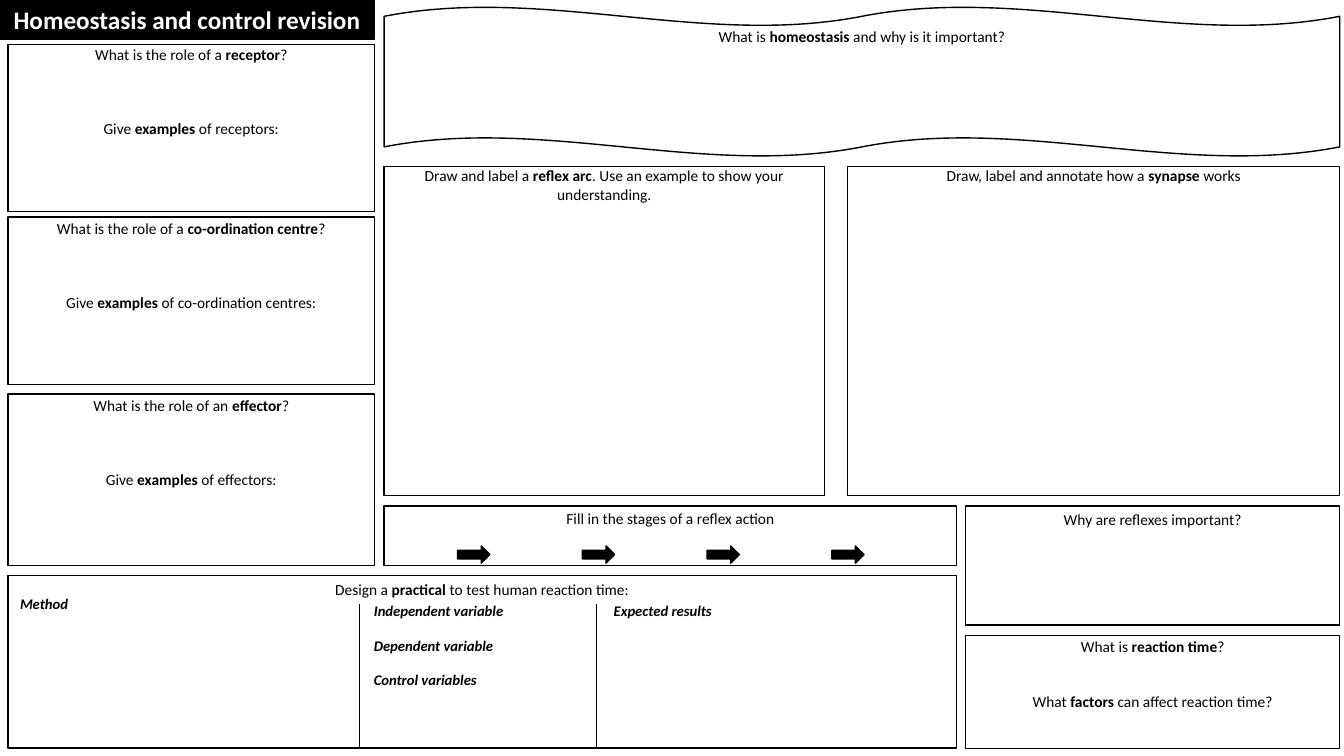
from dataclasses import dataclass

from lxml.etree import SubElement
from pptx import Presentation
from pptx.dml.color import RGBColor
from pptx.enum.shapes import MSO_CONNECTOR, MSO_SHAPE
from pptx.enum.text import MSO_ANCHOR, MSO_AUTO_SIZE, PP_ALIGN
from pptx.oxml.ns import qn
from pptx.util import Pt


@dataclass(frozen=True)
class Theme:
    ink: RGBColor = RGBColor(0, 0, 0)
    paper: RGBColor = RGBColor(255, 255, 255)
    font: str = "Calibri"
    title: float = 18
    prompt: float = 11
    label: float = 10.5
    border: float = 1
    divider: float = 0.5


@dataclass(frozen=True)
class Panel:
    """A worksheet box; ** in a line switches bold, gap separates its lines."""
    left: float
    top: float
    width: float
    height: float
    lines: tuple[str, ...] = ()
    inset: float = 0
    gap: float = 0
    kind: MSO_SHAPE = MSO_SHAPE.RECTANGLE


@dataclass(frozen=True)
class Label:
    left: float
    top: float
    width: float
    height: float
    lines: tuple[str, ...]


THEME = Theme()
PROCESS = MSO_SHAPE.FLOWCHART_PROCESS
LEFT, MIDDLE, RIGHT = 5.6, 274.4, 689.8
SIDE_W, RIGHT_W = 262, 267.2
ROLE_GAP = 39.6

PANELS = (
    Panel(MIDDLE, 5, 682.6, 106.6,
          ("What is **homeostasis** and why is it important?",),
          inset=0.7, kind=MSO_SHAPE.DOUBLE_WAVE),
    Panel(LEFT, 31.6, SIDE_W, 119.6,
          ("What is the role of a **receptor**?", "Give **examples** of receptors:"),
          inset=0.9, gap=ROLE_GAP),
    Panel(LEFT, 154.9, SIDE_W, 119.6,
          ("What is the role of a **co-ordination centre**?",
           "Give **examples** of co-ordination centres:"),
          inset=1.4, gap=ROLE_GAP),
    Panel(LEFT, 281.4, SIDE_W, 122.4,
          ("What is the role of an **effector**?", "Give **examples** of effectors:"),
          inset=1.8, gap=ROLE_GAP),
    Panel(MIDDLE, 118.8, 314.6, 235.4,
          ("Draw and label a **reflex arc**. Use an example to show your understanding.",)),
    Panel(MIDDLE, 361.4, 409, 42.5, ("Fill in the stages of a reflex action",),
          inset=1.9, kind=PROCESS),
    Panel(605.5, 118.8, 351.4, 235.4,
          ("Draw, label and annotate how a **synapse** works",)),
    Panel(RIGHT, 361.4, RIGHT_W, 85, ("Why are reflexes important?",),
          inset=3.3, kind=PROCESS),
    Panel(RIGHT, 454, RIGHT_W, 80.8,
          ("What is **reaction time**?", "What **factors** can affect reaction time?"),
          inset=1.1, gap=26, kind=PROCESS),
    Panel(LEFT, 411.2, 677.6, 123.2,
          ("Design a **practical** to test human reaction time:",), inset=2.9),
)
ARROW = Panel(326.9, 390, 23, 12.3, kind=MSO_SHAPE.RIGHT_ARROW)
ARROW_COUNT, ARROW_STEP = 4, 89.1

LABELS = (
    Label(7.2, 421.2, 82, 20.6, ("Method",)),
    Label(260, 426.3, 161.3, 70.6,
          ("Independent variable", "Dependent variable", "Control variables")),
    Label(431.3, 426.3, 202.3, 20.2, ("Expected results",)),
)
LABEL_GAP = 12.2
DIVIDERS, DIVIDER_TOP, DIVIDER_BOTTOM = (256.6, 426.2), 431.3, 534.6


def write(tf, lines: tuple[str, ...], *, size: float, color: RGBColor = THEME.ink,
          bold: bool = False, italic: bool = False,
          align: PP_ALIGN = PP_ALIGN.CENTER, gap: float = 0) -> None:
    tf.word_wrap = True
    for i, line in enumerate(lines):
        p = tf.add_paragraph() if i else tf.paragraphs[0]
        p.alignment = align
        p.space_before = Pt(gap if i else 0)
        for j, part in enumerate(line.split("**")):
            r = p.add_run()
            r.text = part
            f = r.font
            f.name, f.size, f.italic = THEME.font, Pt(size), italic
            f.bold = bold or j % 2 == 1
            f.color.rgb = color


def paint(sp, fill: RGBColor) -> None:
    sp.fill.solid()
    sp.fill.fore_color.rgb = fill
    sp.line.color.rgb = THEME.ink
    sp.line.width = Pt(THEME.border)


def add_title(s, text: str) -> None:
    sp = s.shapes.title
    sp.left, sp.top, sp.width, sp.height = Pt(0), Pt(0), Pt(267.2), Pt(28.1)
    paint(sp, THEME.ink)
    tf = sp.text_frame
    tf.auto_size = MSO_AUTO_SIZE.NONE
    tf.vertical_anchor = MSO_ANCHOR.MIDDLE
    write(tf, (text,), size=THEME.title, color=THEME.paper, bold=True)


def add_panel(s, panel: Panel, fill: RGBColor, shift: float = 0) -> None:
    sp = s.shapes.add_shape(panel.kind, Pt(panel.left + shift), Pt(panel.top),
                            Pt(panel.width), Pt(panel.height))
    sp.shadow.inherit = False
    paint(sp, fill)
    if panel.lines:
        tf = sp.text_frame
        tf.vertical_anchor = MSO_ANCHOR.TOP
        tf.margin_top, tf.margin_bottom = Pt(panel.inset), Pt(0)
        write(tf, panel.lines, size=THEME.prompt, gap=panel.gap)


def add_label(s, label: Label) -> None:
    sp = s.shapes.add_textbox(Pt(label.left), Pt(label.top),
                              Pt(label.width), Pt(label.height))
    write(sp.text_frame, label.lines, size=THEME.label, bold=True, italic=True,
          align=PP_ALIGN.LEFT, gap=LABEL_GAP)


def add_divider(s, x: float) -> None:
    line = s.shapes.add_connector(MSO_CONNECTOR.STRAIGHT, Pt(x), Pt(DIVIDER_TOP),
                                  Pt(x), Pt(DIVIDER_BOTTOM))
    line.line.color.rgb = THEME.ink
    line.line.width = Pt(THEME.divider)
    SubElement(line._element.spPr, qn("a:effectLst"))


def main() -> None:
    prs = Presentation()
    prs.slide_width, prs.slide_height = Pt(960), Pt(540)
    s = prs.slides.add_slide(prs.slide_layouts[5])
    add_title(s, "Homeostasis and control revision")
    for panel in PANELS:
        add_panel(s, panel, THEME.paper)
    for i in range(ARROW_COUNT):
        add_panel(s, ARROW, THEME.ink, shift=i * ARROW_STEP)
    for x in DIVIDERS:
        add_divider(s, x)
    for label in LABELS:
        add_label(s, label)
    prs.save("out.pptx")


if __name__ == "__main__":
    main()
